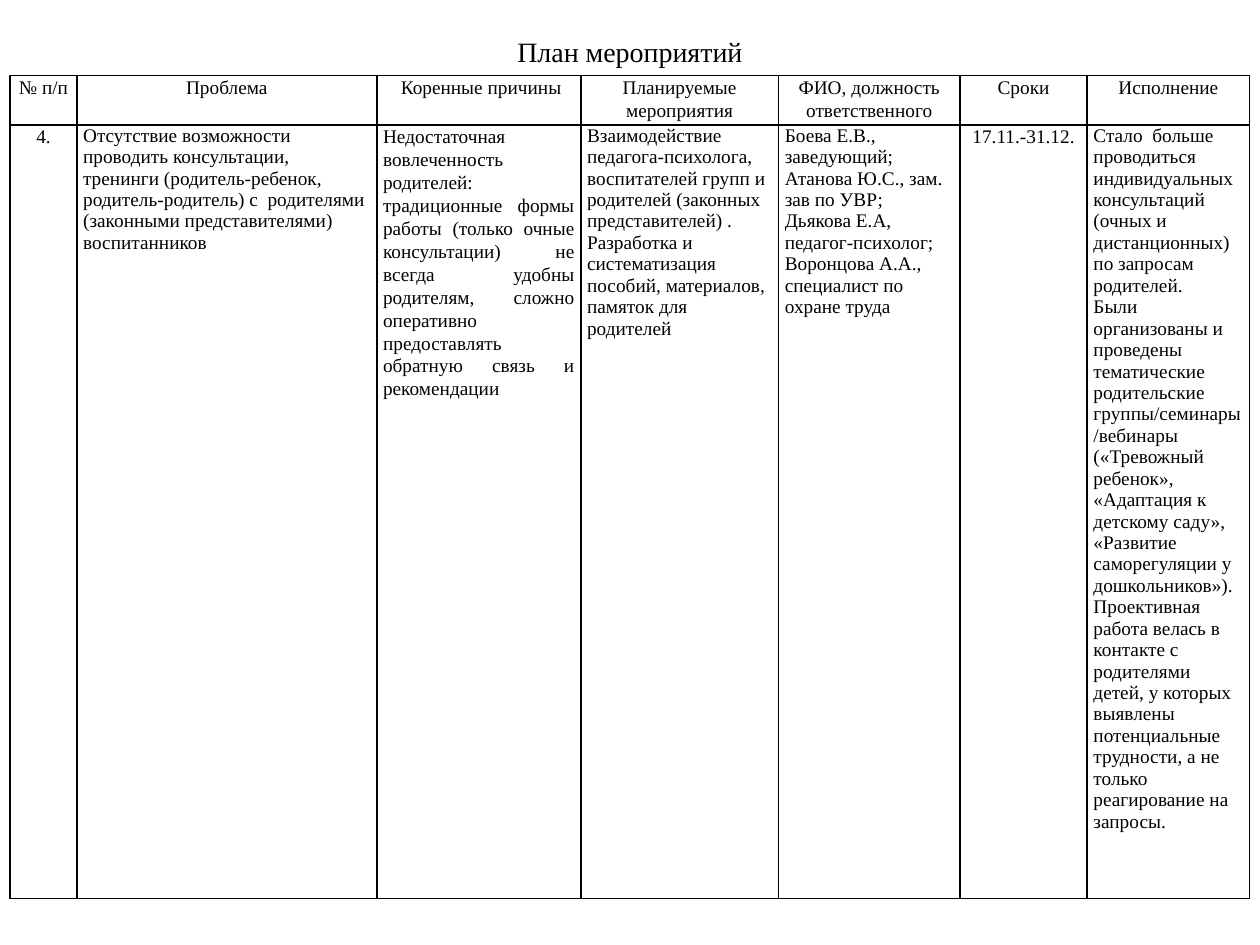
from lxml.etree import SubElement as Sub
from pptx import Presentation
from pptx.dml.color import RGBColor
from pptx.enum.text import MSO_ANCHOR as Anchor, PP_ALIGN as Align
from pptx.oxml.ns import qn
from pptx.util import Pt

BLACK = RGBColor(0, 0, 0)
FACE = "Times New Roman"
TITLE = "План мероприятий"
MID = {"alignment": Align.CENTER, "line_spacing": 1.07}
FULL = {"alignment": Align.JUSTIFY, "line_spacing": 1.07}
LEFT = {"alignment": Align.LEFT}

WIDTHS = [38.1, 171.4, 116.6, 113, 103.7, 72.7, 92.9]
HEIGHTS = [26.2, 442.1]
HEADS = ["№ п/п", "Проблема", " Коренные причины", "Планируемые мероприятия",
         "ФИО, должность ответственного", "Сроки", "Исполнение"]
BODY = [
    (MID, ["4."]),
    (LEFT, ["Отсутствие возможности проводить консультации, тренинги "
            "(родитель-ребенок, родитель-родитель) с  родителями "
            "(законными представителями) воспитанников"]),
    (FULL, ["Недостаточная вовлеченность родителей: традиционные формы "
            "работы (только очные консультации) не всегда удобны родителям, "
            "сложно оперативно предоставлять обратную связь и рекомендации"]),
    (LEFT, ["Взаимодействие педагога-психолога, воспитателей групп и "
            "родителей (законных представителей) .",
            "Разработка и систематизация пособий, материалов, памяток "
            "для родителей"]),
    (LEFT, ["Боева Е.В., заведующий;",
            "Атанова Ю.С., зам. зав по УВР;",
            "Дьякова Е.А, педагог-психолог;",
            "Воронцова А.А., специалист по охране труда"]),
    (MID, ["17.11.-31.12."]),
    (LEFT, ["Стало  больше проводиться индивидуальных консультаций (очных и "
            "дистанционных) по запросам родителей.",
            "Были организованы и проведены тематические родительские "
            "группы/семинары/вебинары («Тревожный ребенок», «Адаптация к  "
            "детскому саду», «Развитие саморегуляции у дошкольников»). "
            "Проективная работа велась в контакте с родителями детей, "
            "у которых выявлены потенциальные трудности, а не только "
            "реагирование на запросы."]),
]
ROWS = [[(MID, [head]) for head in HEADS], BODY]
PADS = {"margin_left": Pt(3.6), "margin_right": Pt(3.6),
        "margin_top": 0, "margin_bottom": 0}


def apply(item, values):
    for name, value in values.items():
        setattr(item, name, value)


def write(frame, lines, look, size):
    for i, line in enumerate(lines):
        para = frame.add_paragraph() if i else frame.paragraphs[0]
        apply(para, look)
        run = para.add_run()
        run.text = line
        apply(run.font, {"name": FACE, "size": Pt(size), "bold": False})
        run.font.color.rgb = BLACK


def frame_cell(cell):
    cell.fill.background()
    props = cell._tc.get_or_add_tcPr()
    for i, side in enumerate("LRTB"):
        line = Sub(props, qn(f"a:ln{side}"), w=str(Pt(1)))
        fill = Sub(line, qn("a:solidFill"))
        Sub(fill, qn("a:srgbClr"), val=str(BLACK))
        props.insert(i, line)


def main():
    deck = Presentation()
    apply(deck, {"slide_width": Pt(720), "slide_height": Pt(540)})
    slide = deck.slides.add_slide(deck.slide_layouts[6])

    title = slide.shapes.add_textbox(Pt(36), Pt(15.1), Pt(648), Pt(28.1))
    apply(title.text_frame, {"word_wrap": True,
                             "vertical_anchor": Anchor.MIDDLE})
    write(title.text_frame, [TITLE], {"alignment": Align.CENTER}, 16)

    table = slide.shapes.add_table(
        len(ROWS), len(WIDTHS), Pt(5.8), Pt(43.2),
        Pt(sum(WIDTHS)), Pt(sum(HEIGHTS))).table
    apply(table, {"first_row": False, "horz_banding": False})
    for col, width in zip(table.columns, WIDTHS):
        col.width = Pt(width)
    for row, height, data in zip(table.rows, HEIGHTS, ROWS):
        row.height = Pt(height)
        for cell, (look, lines) in zip(row.cells, data):
            apply(cell, PADS)
            write(cell.text_frame, lines, look, 11)
            frame_cell(cell)

    deck.save("out.pptx")


if __name__ == "__main__":
    main()
